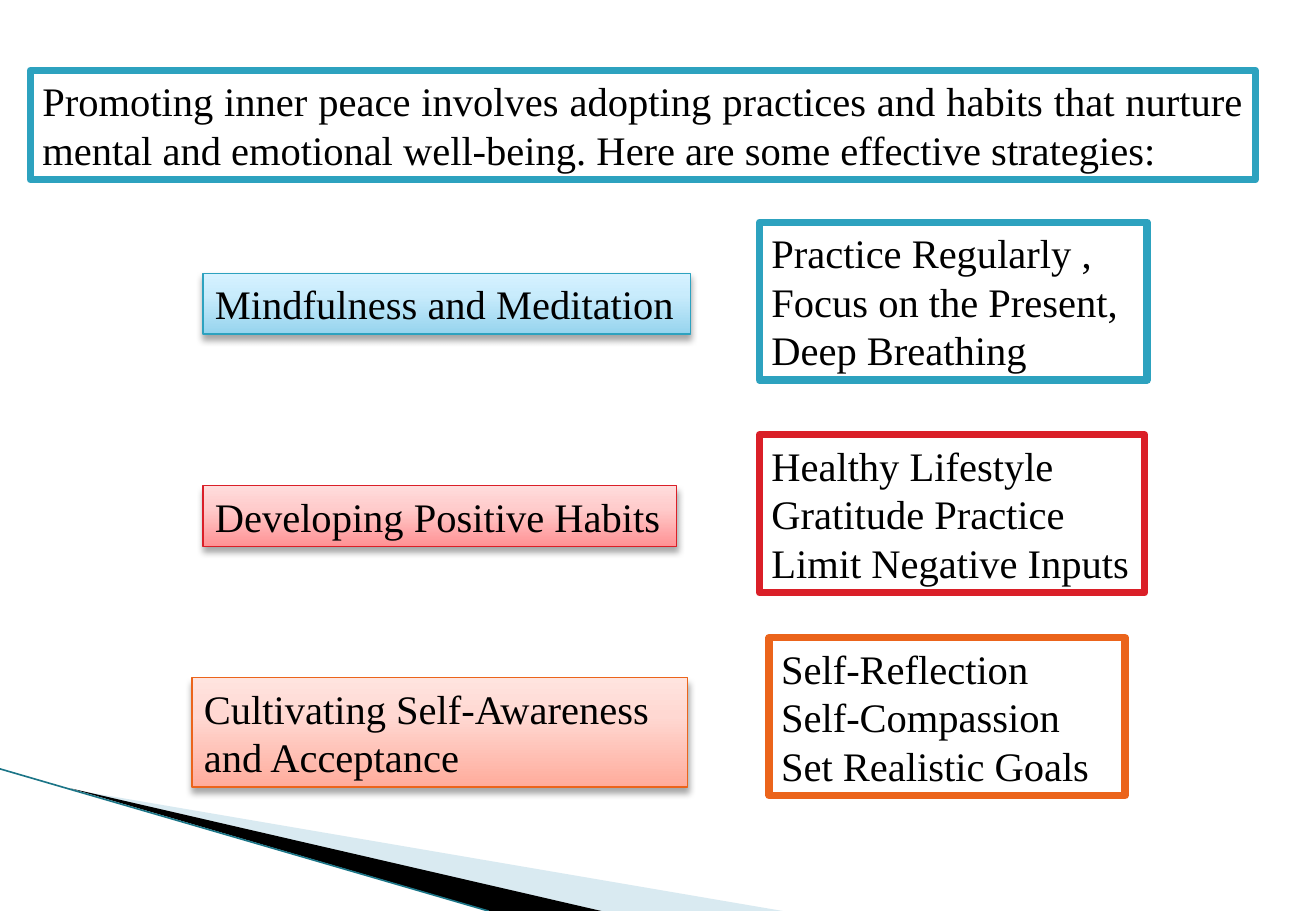
from copy import deepcopy

from lxml.etree import SubElement
from pptx import Presentation
from pptx.dml.color import RGBColor
from pptx.enum.shapes import MSO_CONNECTOR, MSO_SHAPE
from pptx.enum.text import MSO_ANCHOR, MSO_AUTO_SIZE, PP_ALIGN
from pptx.oxml.ns import qn
from pptx.util import Inches, Pt

COLORS = {"white": "FFFFFF", "black": "000000", "teal": "2DA2BF", "red": "DA1F28",
          "orange": "EB641B", "pale": "A0CBDC", "edge": "1B7587"}
# Gradient stops run from the bottom of a box to its top.
GRADIENTS = {"teal": ["96D4EE", "C9ECFC", "D7F2FF"],
             "red": ["FF9294", "FFCDCD", "FFDCDC"],
             "orange": ["FFAC9C", "FFD8D2", "FFE4DF"]}
STOPS = [0, 0.65, 1]

INTRO = ("Promoting inner peace involves adopting practices and habits that nurture "
         "mental and emotional well-being. Here are some effective strategies:")
# colour, strategy lines and place, practice lines and place (left, top, width)
STRATEGIES = [
    ("teal", ["Mindfulness and Meditation"], (1.67, 2.25, 4.01),
     ["Practice Regularly ,", "Focus on the Present,", "Deep Breathing"], (6.25, 1.83, 3.19)),
    ("red", ["Developing Positive Habits"], (1.67, 4, 3.9),
     ["Healthy Lifestyle", "Gratitude Practice", "Limit Negative Inputs"], (6.25, 3.58, 3.17)),
    ("orange", ["Cultivating Self-Awareness", "and Acceptance"], (1.58, 5.58, 4.08),
     ["Self-Reflection", "Self-Compassion", "Set Realistic Goals"], (6.33, 5.25, 2.93)),
]
WEDGES = [("pale", 40, [(0.59, 6.5), (6.44, 7.5), (4.94, 7.5)]),
          ("black", 100, [(0.58, 6.49), (4.95, 7.5), (4.03, 7.5)])]
LINE_HEIGHT, PADDING = 0.4, 0.1


def rgb(name):
    return RGBColor.from_string(COLORS[name])


def set_alpha(color, percent):
    SubElement(color, qn("a:alpha")).set("val", str(percent * 1000))


def add_wedge(slide, color, opacity, points):
    pts = [(Inches(x), Inches(y)) for x, y in points]
    builder = slide.shapes.build_freeform(*pts[0])
    builder.add_line_segments(pts[1:], close=True)
    sp = builder.convert_to_shape()
    sp.shadow.inherit = False
    sp.fill.solid()
    sp.fill.fore_color.rgb = rgb(color)
    sp.line.fill.background()
    if opacity < 100:
        set_alpha(sp.fill._xPr.find(".//" + qn("a:srgbClr")), opacity)


def add_edge(slide, start, end):
    line = slide.shapes.add_connector(MSO_CONNECTOR.STRAIGHT, *map(Inches, start + end))
    line.line.color.rgb = rgb("edge")
    line.line.width = Pt(0.95)
    SubElement(line._element.spPr, qn("a:effectLst"))


def fill_gradient(sp, hexes):
    sp.fill.gradient()
    sp.fill.gradient_angle = 90
    gs_list = sp.fill._xPr.find(".//" + qn("a:gsLst"))
    gs_list.append(deepcopy(gs_list[-1]))
    for stop, position, value in zip(sp.fill.gradient_stops, STOPS, hexes):
        stop.position = position
        stop.color.rgb = RGBColor.from_string(value)


def add_drop_shadow(sp):
    effects = sp._element.spPr.find(qn("a:effectLst"))
    shadow = SubElement(effects, qn("a:outerShdw"), blurRad=str(Pt(4)), dist=str(Pt(3)),
                        dir="5400000", rotWithShape="0")
    color = SubElement(shadow, qn("a:srgbClr"), val=COLORS["black"])
    set_alpha(color, 35)


def add_box(slide, lines, place, color, rows=None, raised=False, align=PP_ALIGN.LEFT):
    """Add a text box shape, outlined in white or raised with gradient and shadow."""
    left, top, width = place
    height = (rows or len(lines)) * LINE_HEIGHT + PADDING
    sp = slide.shapes.add_shape(MSO_SHAPE.RECTANGLE, *map(Inches, (left, top, width, height)))
    sp.line.color.rgb = rgb(color)
    sp.line.width = Pt(0.75 if raised else 4.33)
    sp.shadow.inherit = False
    if raised:
        fill_gradient(sp, GRADIENTS[color])
        add_drop_shadow(sp)
    else:
        sp.fill.solid()
        sp.fill.fore_color.rgb = rgb("white")
    tf = sp.text_frame
    tf.word_wrap = True
    tf.auto_size = MSO_AUTO_SIZE.SHAPE_TO_FIT_TEXT
    tf.vertical_anchor = MSO_ANCHOR.TOP
    for i, text in enumerate(lines):
        p = tf.add_paragraph() if i else tf.paragraphs[0]
        p.alignment = align
        r = p.add_run()
        r.text = text
        r.font.name = "Times New Roman"
        r.font.size = Pt(24)
        r.font.color.rgb = rgb("black")


def main():
    prs = Presentation()
    prs.slide_width, prs.slide_height = Inches(10.83), Inches(7.5)
    slide = prs.slides.add_slide(prs.slide_layouts[6])
    for wedge in WEDGES:
        add_wedge(slide, *wedge)
    add_edge(slide, (0, 6.33), (4.02, 7.5))
    add_box(slide, [INTRO], (0.25, 0.58, 10.08), "teal", rows=2, align=PP_ALIGN.JUSTIFY)
    for color, strategy, strategy_place, practices, practices_place in STRATEGIES:
        add_box(slide, strategy, strategy_place, color, raised=True)
        add_box(slide, practices, practices_place, color)
    prs.save("out.pptx")


if __name__ == "__main__":
    main()
